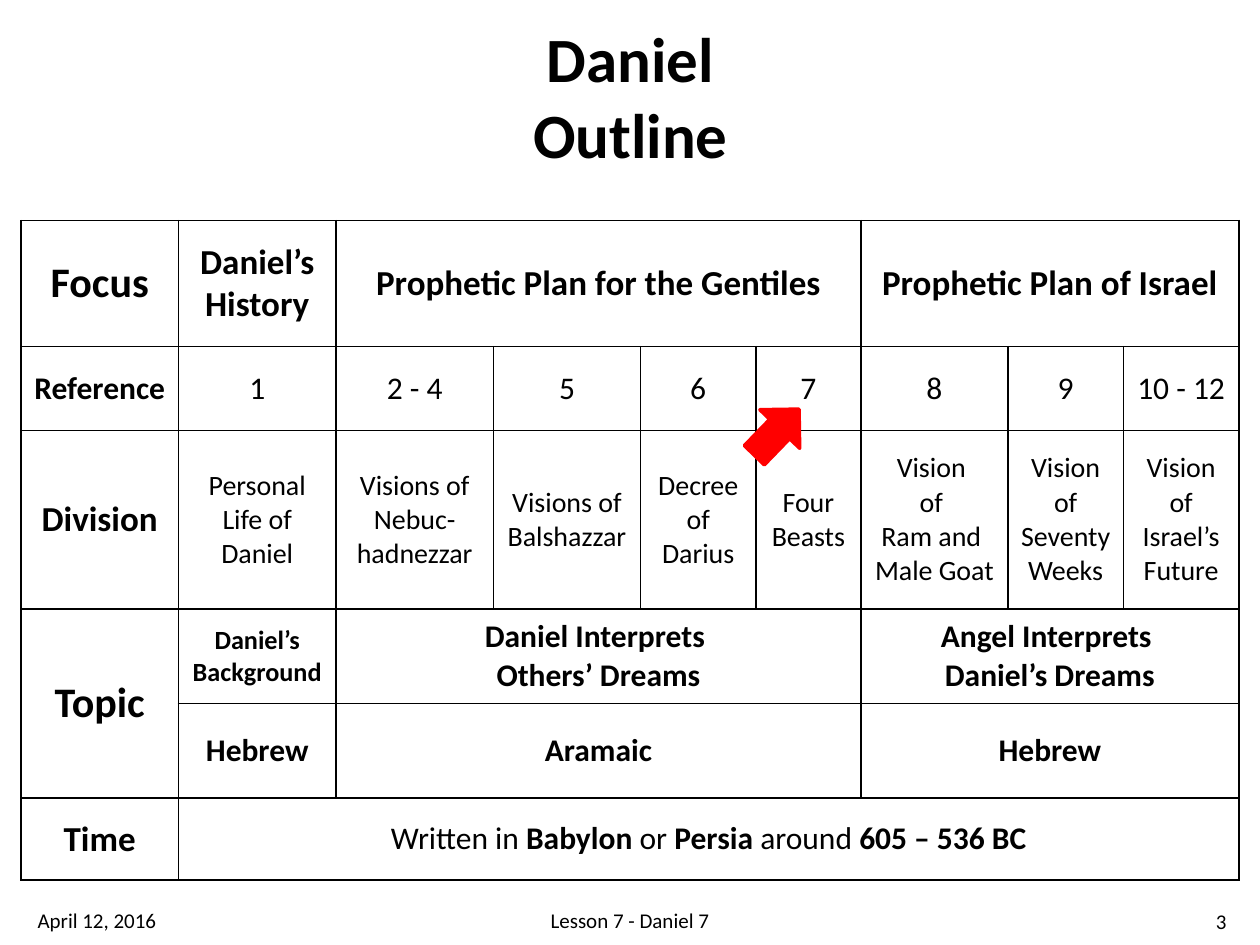
from dataclasses import dataclass

from lxml.etree import SubElement
from pptx import Presentation
from pptx.dml.color import RGBColor
from pptx.enum.shapes import MSO_SHAPE as Shape
from pptx.enum.text import MSO_ANCHOR as Anchor, MSO_AUTO_SIZE as AutoSize, PP_ALIGN as Align
from pptx.oxml.ns import qn
from pptx.util import Pt


@dataclass(frozen=True)
class Theme:
    font: str = "Calibri"
    ink: str = "000000"
    accent: str = "FF0000"
    title: float = 36
    heading: float = 24
    subheading: float = 20
    body: float = 18
    detail: float = 16
    compact: float = 15
    footer: float = 12
    border: float = 1


@dataclass(frozen=True)
class Box:
    left: float
    top: float
    width: float
    height: float

    def lengths(self) -> list:
        return [Pt(value) for value in (self.left, self.top, self.width, self.height)]


@dataclass(frozen=True)
class Entry:
    """A table entry; lines split at newlines, asterisks switch bold on and off."""
    row: int
    column: int
    text: str
    size: float
    bold: bool = True
    rows: int = 1
    columns: int = 1


@dataclass(frozen=True)
class Footer:
    box: Box
    text: str
    align: Align


THEME = Theme()
COLUMN_WIDTHS = [90, 90, 90, 84, 66, 60, 84, 66, 66]
ROW_HEIGHTS = [72, 48, 102, 54, 54, 47]
TABLE_BOX = Box(12, 126, sum(COLUMN_WIDTHS), sum(ROW_HEIGHTS))
TITLE_BOX = Box(296.6, 7.2, 127.4, 94.3)
ARROW_BOX = Box(425.5, 231.1, 36.7, 31.7)

CHAPTERS = ["1", "2 - 4", "5", "6", "7", "8", "9", "10 - 12"]
DIVISIONS = [
    "Personal Life of Daniel", "Visions of Nebuc-hadnezzar", "Visions of Balshazzar",
    "Decree of Darius", "Four Beasts", "Vision \nof \nRam and \nMale Goat",
    "Vision of Seventy Weeks", "Vision of Israel’s Future",
]
ENTRIES = [
    # Row labels
    Entry(0, 0, "Focus", THEME.heading),
    Entry(1, 0, "Reference", THEME.body),
    Entry(2, 0, "Division", THEME.subheading),
    Entry(3, 0, "Topic", THEME.heading, rows=2),
    Entry(5, 0, "Time", THEME.subheading),
    # Focus
    Entry(0, 1, "Daniel’s History", THEME.subheading),
    Entry(0, 2, "Prophetic Plan for the Gentiles", THEME.subheading, columns=4),
    Entry(0, 6, "Prophetic Plan of Israel", THEME.subheading, columns=3),
    # Reference and division
    *(Entry(1, column, text, THEME.body, False) for column, text in enumerate(CHAPTERS, 1)),
    *(Entry(2, column, text, THEME.detail, False) for column, text in enumerate(DIVISIONS, 1)),
    # Topic
    Entry(3, 1, "Daniel’s Background", THEME.compact),
    Entry(3, 2, "Daniel Interprets \nOthers’ Dreams", THEME.body, columns=4),
    Entry(3, 6, "Angel Interprets \nDaniel’s Dreams", THEME.body, columns=3),
    Entry(4, 1, "Hebrew", THEME.body),
    Entry(4, 2, "Aramaic", THEME.body, columns=4),
    Entry(4, 6, "Hebrew", THEME.body, columns=3),
    # Time
    Entry(5, 1, "Written in *Babylon *or *Persia *around *605 – 536 BC", THEME.body, False,
          columns=8),
]
FOOTERS = [
    Footer(Box(14.4, 511.2, 123, 28.8), "April 12, 2016", Align.LEFT),
    Footer(Box(111, 511.2, 498, 28.8), "Lesson 7 - Daniel 7", Align.CENTER),
    Footer(Box(654, 512, 54, 28.8), "3", Align.RIGHT),
]


def write(frame, text: str, size: float, bold: bool, align: Align) -> None:
    for index, line in enumerate(text.split("\n")):
        paragraph = frame.paragraphs[0] if index == 0 else frame.add_paragraph()
        paragraph.alignment = align
        for part, words in enumerate(line.split("*")):
            run = paragraph.add_run()
            run.text = words
            style = {"name": THEME.font, "size": Pt(size), "bold": bold ^ (part % 2 == 1)}
            for name, value in style.items():
                setattr(run.font, name, value)
            run.font.color.rgb = RGBColor.from_string(THEME.ink)


def add_borders(cell) -> None:
    properties = cell._tc.get_or_add_tcPr()
    for side in ("lnL", "lnR", "lnT", "lnB"):
        line = SubElement(properties, qn(f"a:{side}"), w=str(Pt(THEME.border)))
        fill = SubElement(line, qn("a:solidFill"))
        SubElement(fill, qn("a:srgbClr"), val=THEME.ink)


def add_title(slide, text: str) -> None:
    title = slide.shapes.title
    title.left, title.top, title.width, title.height = TITLE_BOX.lengths()
    frame = title.text_frame
    layout = {"word_wrap": False, "auto_size": AutoSize.SHAPE_TO_FIT_TEXT,
              "vertical_anchor": Anchor.MIDDLE}
    for name, value in layout.items():
        setattr(frame, name, value)
    write(frame, text, THEME.title, True, Align.CENTER)


def add_outline_table(slide) -> None:
    table = slide.shapes.add_table(
        len(ROW_HEIGHTS), len(COLUMN_WIDTHS), *TABLE_BOX.lengths()).table
    table.first_row = table.horz_banding = False
    for column, width in zip(table.columns, COLUMN_WIDTHS):
        column.width = Pt(width)
    for row, height in zip(table.rows, ROW_HEIGHTS):
        row.height = Pt(height)
    for cell in table.iter_cells():
        add_borders(cell)
        cell.fill.background()
    for entry in ENTRIES:
        cell = table.cell(entry.row, entry.column)
        if entry.rows * entry.columns > 1:
            cell.merge(table.cell(entry.row + entry.rows - 1, entry.column + entry.columns - 1))
        cell.vertical_anchor = Anchor.MIDDLE
        write(cell.text_frame, entry.text, entry.size, entry.bold, Align.CENTER)


def add_arrow(slide) -> None:
    arrow = slide.shapes.add_shape(Shape.RIGHT_ARROW, *ARROW_BOX.lengths())
    arrow.rotation = 314.1
    arrow.shadow.inherit = False
    arrow.fill.solid()
    arrow.fill.fore_color.rgb = RGBColor.from_string(THEME.accent)
    arrow.line.color.rgb = RGBColor.from_string(THEME.accent)
    arrow.line.width = Pt(2)


def add_footer(slide, footer: Footer) -> None:
    frame = slide.shapes.add_textbox(*footer.box.lengths()).text_frame
    frame.word_wrap = True
    frame.vertical_anchor = Anchor.MIDDLE
    write(frame, footer.text, THEME.footer, False, footer.align)


def main() -> None:
    presentation = Presentation()
    presentation.slide_width, presentation.slide_height = Pt(720), Pt(540)
    slide = presentation.slides.add_slide(presentation.slide_layouts[5])
    add_title(slide, "Daniel\nOutline")
    add_outline_table(slide)
    # Marker for the current chapter
    add_arrow(slide)
    for footer in FOOTERS:
        add_footer(slide, footer)
    presentation.save("out.pptx")


if __name__ == "__main__":
    main()
